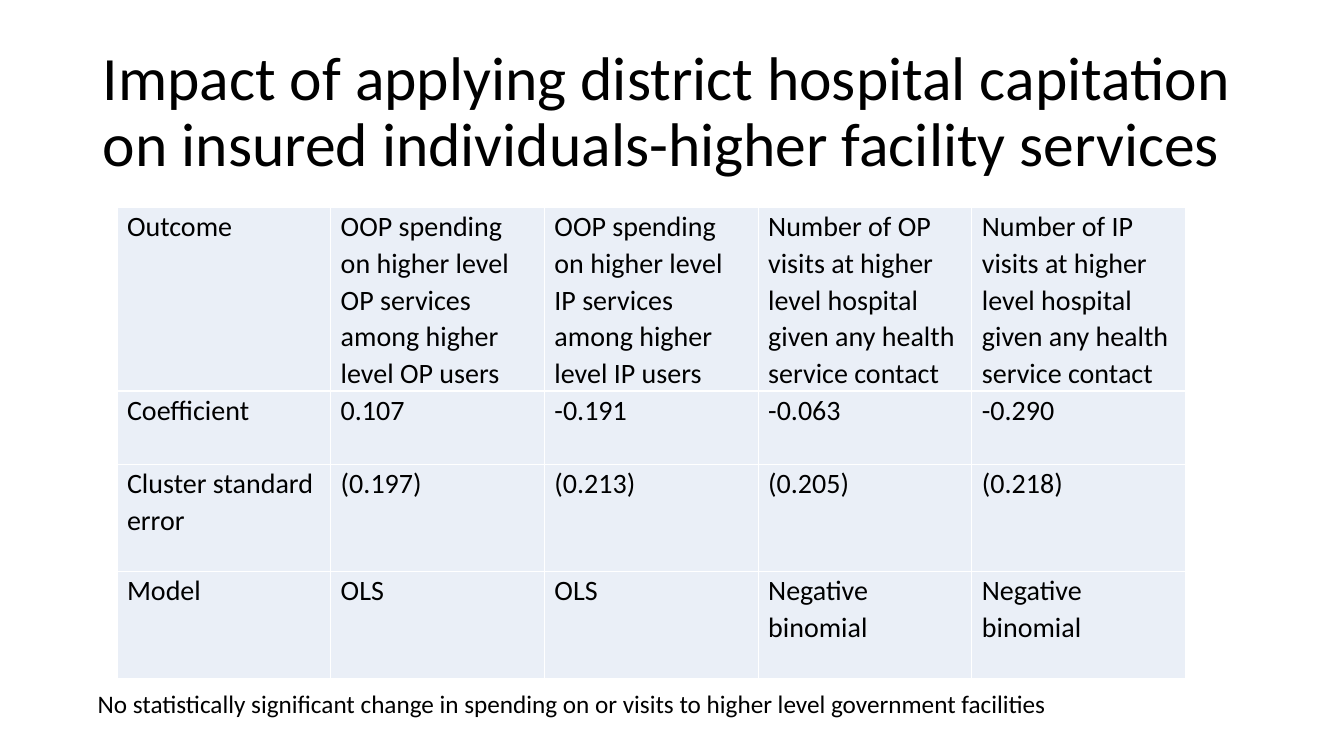
from dataclasses import dataclass

from lxml.etree import SubElement
from pptx import Presentation
from pptx.dml.color import RGBColor as RGB
from pptx.enum.text import MSO_ANCHOR as Anchor, MSO_AUTO_SIZE as AutoSize, PP_ALIGN as Align
from pptx.oxml.ns import qn
from pptx.util import Emu, Pt

PX = 9144  # 100 px to the inch


@dataclass(frozen=True)
class Theme:
    font: str = "Calibri"
    text: str = "000000"
    cell: str = "EAEFF7"
    border: str = "FFFFFF"
    title_size: int = 44
    table_size: int = 20
    note_size: int = 18


theme = Theme()


def px(*lengths):
    return [Emu(length * PX) for length in lengths]


def write(frame, text, size, spacing=1.0, anchor=Anchor.TOP):
    frame.word_wrap = True
    frame.vertical_anchor = anchor
    paragraph = frame.paragraphs[0]
    paragraph.alignment = Align.LEFT
    paragraph.line_spacing = spacing
    run = paragraph.add_run()
    run.text = text
    run.font.name = theme.font
    run.font.size = Pt(size)
    run.font.color.rgb = RGB.from_string(theme.text)


presentation = Presentation()
presentation.slide_width, presentation.slide_height = px(1333, 750)
slide = presentation.slides.add_slide(presentation.slide_layouts[5])

# Title
title = slide.shapes.title
title.left, title.top, title.width, title.height = px(92, 40, 1150, 145)
write(title.text_frame,
      "Impact of applying district hospital capitation "
      "on insured individuals-higher facility services",
      theme.title_size, spacing=0.9, anchor=Anchor.MIDDLE)
title.text_frame.auto_size = AutoSize.NONE

# Table of results
results = [
    ["Outcome",
     "OOP spending on higher level OP services among higher level OP users",
     "OOP spending on higher level IP services among higher level IP users",
     "Number of OP visits at higher level hospital given any health service contact",
     "Number of IP visits at higher level hospital given any health service contact"],
    ["Coefficient", "0.107", "-0.191", "-0.063", "-0.290"],
    ["Cluster standard error", "(0.197)", "(0.213)", "(0.205)", "(0.218)"],
    ["Model", "OLS", "OLS", "Negative binomial", "Negative binomial"],
]
row_heights = [182, 73, 106, 106]
table = slide.shapes.add_table(
    len(results), len(results[0]), *px(116, 206, 1060, sum(row_heights))).table
table.first_row = False
table.horz_banding = False
for column in table.columns:
    column.width = Emu(212 * PX)

for row, height, texts in zip(table.rows, row_heights, results):
    row.height = Emu(height * PX)
    for cell, text in zip(row.cells, texts):
        cell.margin_left, cell.margin_top, cell.margin_right, cell.margin_bottom = px(10, 0, 10, 0)
        write(cell.text_frame, text, theme.table_size, spacing=1.07)
        # White borders go before the fill
        properties = cell._tc.get_or_add_tcPr()
        for side in ("lnL", "lnR", "lnT", "lnB"):
            line = SubElement(properties, qn(f"a:{side}"), w=str(Pt(1)))
            fill = SubElement(line, qn("a:solidFill"))
            SubElement(fill, qn("a:srgbClr"), val=theme.border)
        cell.fill.solid()
        cell.fill.fore_color.rgb = RGB.from_string(theme.cell)

# Note under the table
note = slide.shapes.add_textbox(*px(87, 678, 1160, 40))
write(note.text_frame,
      "No statistically significant change in spending on or visits "
      "to higher level government facilities",
      theme.note_size)
note.text_frame.auto_size = AutoSize.SHAPE_TO_FIT_TEXT

presentation.save("out.pptx")
